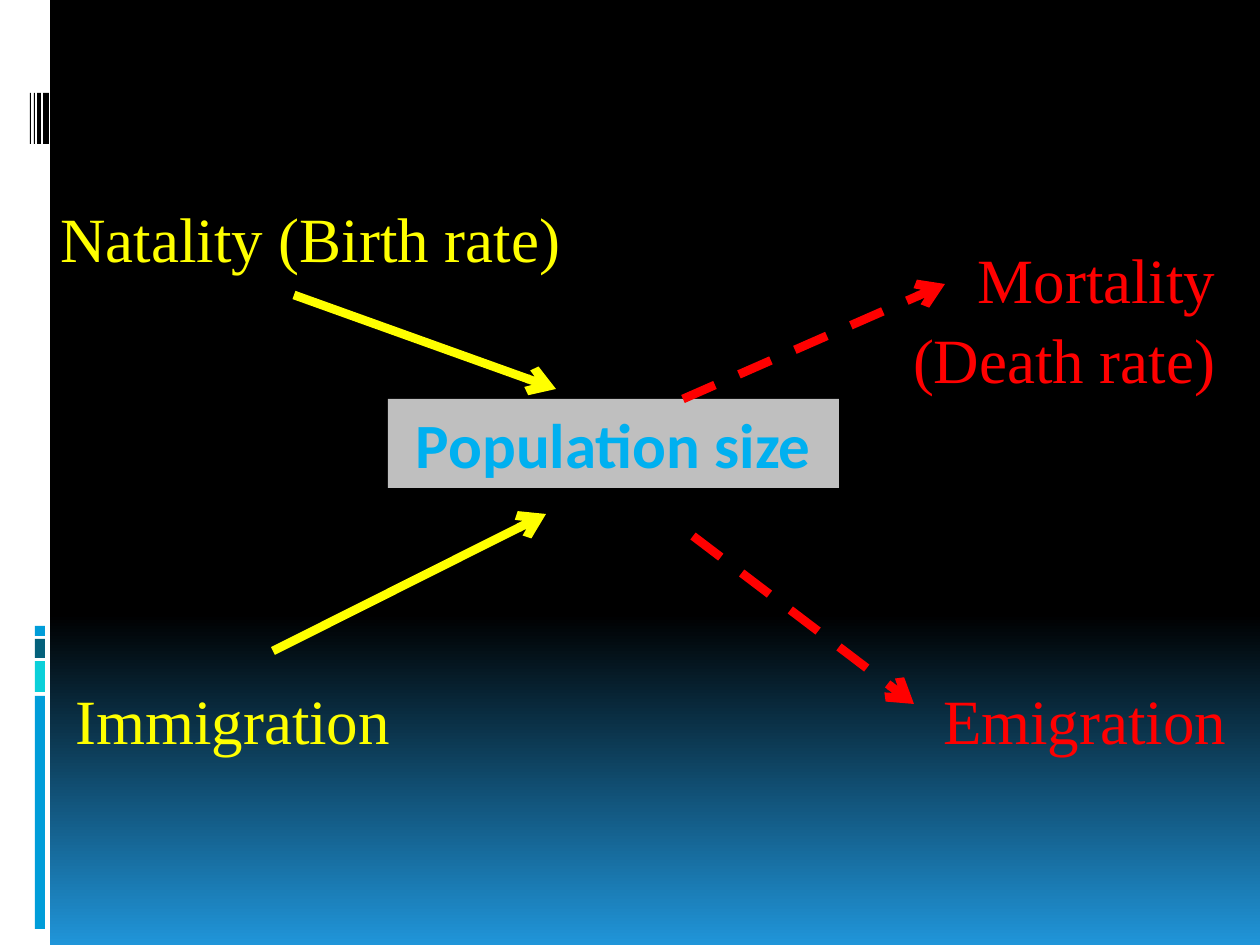
from pptx import Presentation
from pptx import util as u
from pptx.dml.color import RGBColor
from pptx.enum import dml, shapes, text
from pptx.oxml.ns import qn
from lxml import etree

PX = 914400 / 126
HUE = {
    "black": "000000", "white": "FFFFFF", "glow": "2095D9",
    "blue": "009DD9", "aqua": "0BD0D9", "teal": "04617B",
    "grey": "BFBFBF", "sky": "00B0F0", "gain": "FFFF00", "loss": "FF0000",
}


def px(*vals):
    return [u.Emu(round(v * PX)) for v in vals]


def rgb(name):
    return RGBColor.from_string(HUE[name])


prs = Presentation()
prs.slide_width, prs.slide_height = px(1260, 945)
slide = prs.slides.add_slide(prs.slide_layouts[6])

# Background: black down to two thirds, then blue
fill = slide.background.fill
fill.gradient()
fill.gradient_angle = 270
for stop, pos, hue in zip(fill.gradient_stops, (0.65, 1), ("black", "glow")):
    stop.position = pos
    stop.color.rgb = rgb(hue)

# Side band, its coloured blocks and thin bars, then the centre box
rects = [(0, 0, 50, 945, "white")]
rects += [(35, y, 10, h, hue) for y, h, hue in (
    (696, 233, "blue"), (661, 31, "aqua"), (639, 19, "teal"), (626, 10, "blue"))]
rects += [(x, 93, w, 51, "black") for x, w in ((43, 6), (37, 4), (34, 1), (30, 1))]
rects.append((388, 399, 451, 89, "grey"))
for *spot, hue in rects:
    box = slide.shapes.add_shape(shapes.MSO_SHAPE.RECTANGLE, *px(*spot))
    box.shadow.inherit = False
    box.fill.solid()
    box.fill.fore_color.rgb = rgb(hue)
    box.line.fill.background()

# Centre label sits in the last rectangle
para = box.text_frame.paragraphs[0]
para.text = "Population size"
para.alignment = text.PP_ALIGN.CENTER
para.font.name, para.font.size, para.font.bold = "Calibri", u.Pt(36), True
para.font.color.rgb = rgb("sky")

# Factors that raise or lower the population
labels = [
    ("Emigration", 788, 672, 451, 89, "loss"),
    ("Mortality\n(Death rate)", 777, 231, 451, 165, "loss"),
    ("Immigration", 63, 672, 388, 89, "gain"),
    ("Natality (Birth rate)", 48, 190, 730, 89, "gain"),
]
for words, *spot, hue in labels:
    frame = slide.shapes.add_textbox(*px(*spot)).text_frame
    frame.word_wrap = True
    frame.text = words
    for para in frame.paragraphs:
        para.alignment = text.PP_ALIGN.RIGHT if hue == "loss" else text.PP_ALIGN.LEFT
        para.line_spacing = 1.05
        para.font.name, para.font.size = "Times New Roman", u.Pt(36)
        para.font.color.rgb = rgb(hue)

# Arrows: solid inwards, dashed outwards
arrows = [
    (294, 295, 556, 389, "gain"),
    (273, 651, 546, 514, "gain"),
    (683, 399, 945, 284, "loss"),
    (693, 536, 914, 704, "loss"),
]
for *ends, hue in arrows:
    arrow = slide.shapes.add_connector(shapes.MSO_CONNECTOR.STRAIGHT, *px(*ends))
    arrow.line.width = u.Pt(5)
    arrow.line.color.rgb = rgb(hue)
    if hue == "loss":
        arrow.line.dash_style = dml.MSO_LINE.DASH
    tip = etree.SubElement(arrow.line._get_or_add_ln(), qn("a:tailEnd"))
    tip.set("type", "arrow")
    etree.SubElement(arrow._element.spPr, qn("a:effectLst"))

prs.save("out.pptx")
